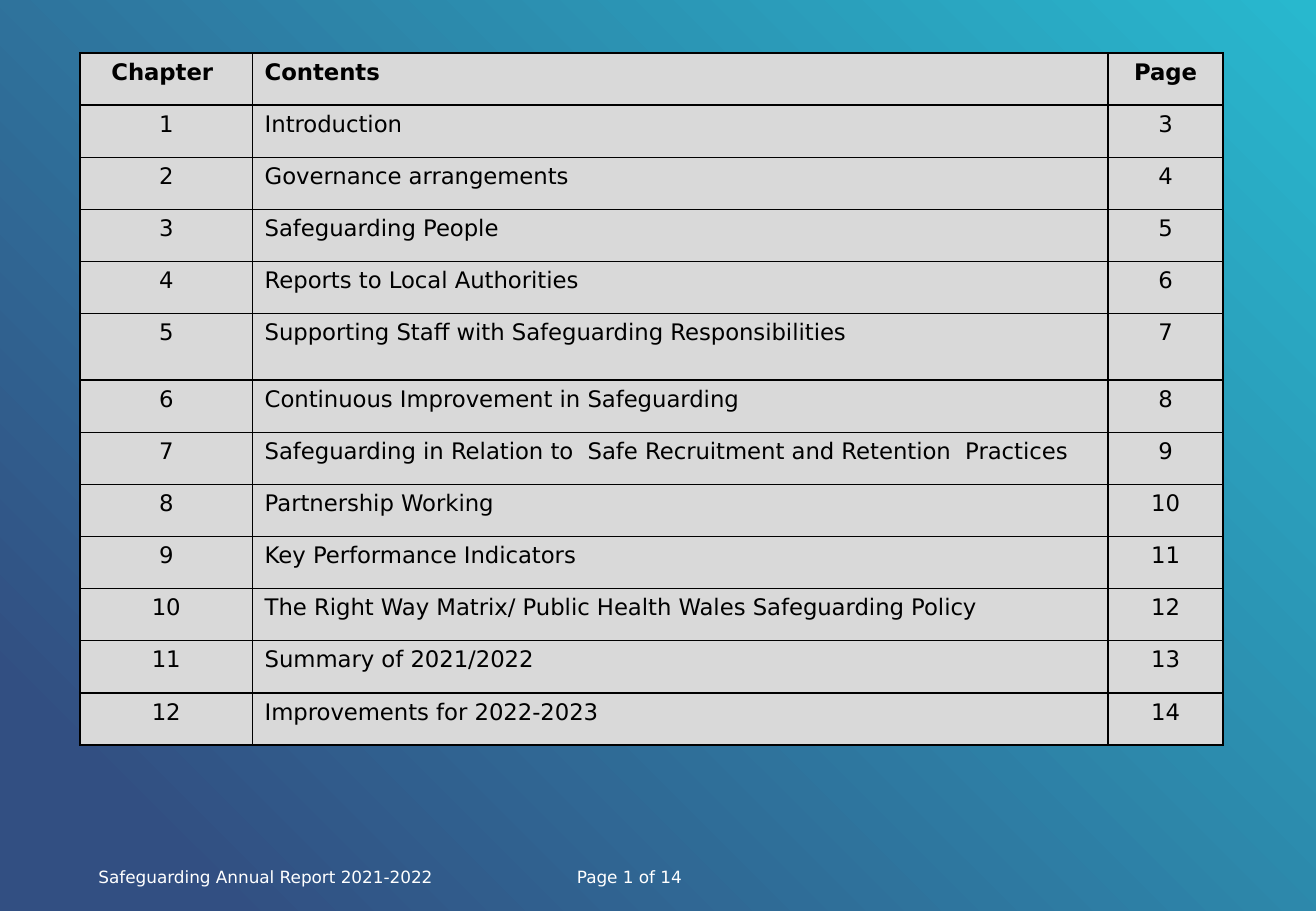
from lxml.etree import SubElement
from pptx import Presentation
from pptx.dml.color import RGBColor
from pptx.enum.text import MSO_AUTO_SIZE, PP_ALIGN
from pptx.oxml.ns import qn
from pptx.util import Cm, Pt

NAVY = RGBColor(0x32, 0x4F, 0x82)
TURQUOISE = RGBColor(0x28, 0xB8, 0xCE)
BLACK = RGBColor(0, 0, 0)
WHITE = RGBColor(0xFF, 0xFF, 0xFF)
GREY = RGBColor(0xD9, 0xD9, 0xD9)

CHAPTERS = [
    "Introduction",
    "Governance arrangements",
    "Safeguarding People",
    "Reports to Local Authorities",
    "Supporting Staff with Safeguarding Responsibilities",
    "Continuous Improvement in Safeguarding",
    "Safeguarding in Relation to  Safe Recruitment and Retention  Practices",
    "Partnership Working",
    "Key Performance Indicators",
    "The Right Way Matrix/ Public Health Wales Safeguarding Policy",
    "Summary of 2021/2022",
    "Improvements for 2022-2023",
]
FIRST_PAGE = 3
TALL_CHAPTER = 5


class ContentsSlide:
    font_name = "DejaVu Sans"
    column_widths = (3.61, 17.88, 2.41)
    alignments = (PP_ALIGN.CENTER, PP_ALIGN.LEFT, PP_ALIGN.CENTER)
    row_height = 1.09
    tall_row_height = 1.39

    def __init__(self, presentation):
        self.slide = presentation.slides.add_slide(presentation.slide_layouts[6])

    def format_font(self, paragraph, size, color, bold=False):
        values = {"name": self.font_name, "size": Pt(size), "bold": bold}
        for run in paragraph.runs:
            for name, value in values.items():
                setattr(run.font, name, value)
            run.font.color.rgb = color

    def add_background(self):
        fill = self.slide.background.fill
        fill.gradient()
        fill.gradient_angle = 45
        stops = ((0.1, NAVY), (1, TURQUOISE))
        for stop, (position, color) in zip(fill.gradient_stops, stops):
            stop.position = position
            stop.color.rgb = color

    def add_borders(self, cell):
        properties = cell._tc.get_or_add_tcPr()
        for side in ("a:lnL", "a:lnR", "a:lnT", "a:lnB"):
            line = SubElement(properties, qn(side), w=str(Pt(1)))
            solid = SubElement(line, qn("a:solidFill"))
            SubElement(solid, qn("a:srgbClr"), val=str(BLACK))

    def add_cell(self, cell, text, alignment, bold):
        self.add_borders(cell)
        cell.fill.solid()
        cell.fill.fore_color.rgb = GREY
        cell.text = text
        paragraph = cell.text_frame.paragraphs[0]
        paragraph.alignment = alignment
        self.format_font(paragraph, 13.5, BLACK, bold)

    def add_table(self, rows, left, top):
        heights = [self.row_height] * len(rows)
        heights[TALL_CHAPTER] = self.tall_row_height
        table = self.slide.shapes.add_table(
            len(rows), len(self.column_widths), Cm(left), Cm(top),
            Cm(sum(self.column_widths)), Cm(sum(heights))).table
        table.first_row = table.horz_banding = False
        for column, width in zip(table.columns, self.column_widths):
            column.width = Cm(width)
        for index, (row, height, texts) in enumerate(zip(table.rows, heights, rows)):
            row.height = Cm(height)
            for cell, text, alignment in zip(row.cells, texts, self.alignments):
                self.add_cell(cell, text, alignment, bold=index == 0)

    def add_footer(self, text, left, top, width, height, tab):
        box = self.slide.shapes.add_textbox(Cm(left), Cm(top), Cm(width), Cm(height))
        frame = box.text_frame
        frame.word_wrap = True
        frame.auto_size = MSO_AUTO_SIZE.SHAPE_TO_FIT_TEXT
        paragraph = frame.paragraphs[0]
        paragraph.text = text
        tabs = SubElement(paragraph._p.get_or_add_pPr(), qn("a:tabLst"))
        SubElement(tabs, qn("a:tab"), pos=str(Cm(tab)), algn="l")
        self.format_font(paragraph, 10, WHITE)


def main():
    presentation = Presentation()
    presentation.slide_width = Cm(27.51)
    presentation.slide_height = Cm(19.05)

    contents = ContentsSlide(presentation)
    contents.add_background()
    rows = [("Chapter ", "Contents", "Page")]
    for number, title in enumerate(CHAPTERS, 1):
        rows.append((str(number), title, str(number + FIRST_PAGE - 1)))
    contents.add_table(rows, left=1.67, top=1.11)
    contents.add_footer("Safeguarding Annual Report 2021-2022\tPage 1 of 14",
                        left=1.81, top=18, width=14.15, height=0.7, tab=10)
    presentation.save("out.pptx")


if __name__ == "__main__":
    main()
